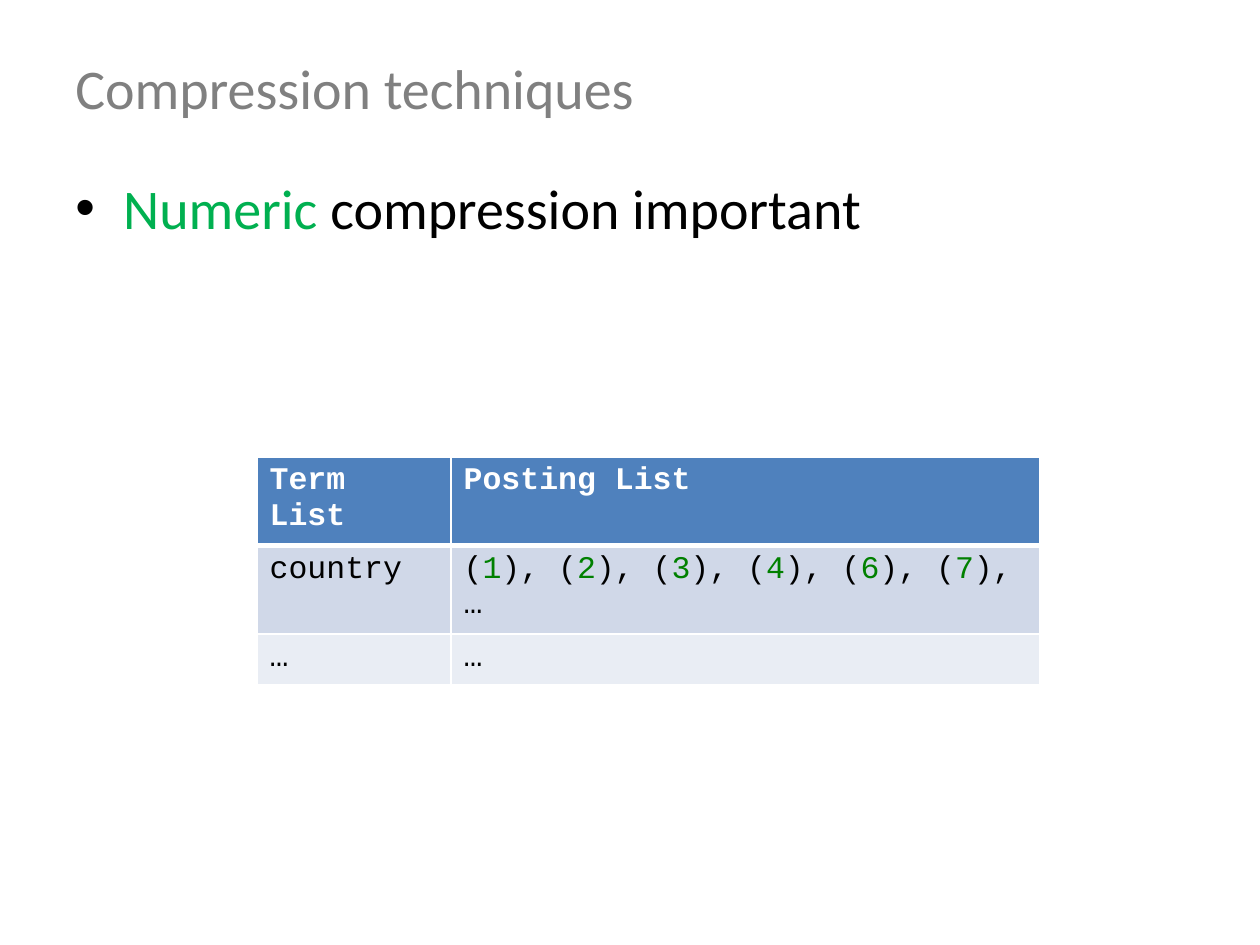
import pptx
import pptx.dml.color
import pptx.enum.text
import pptx.oxml.ns
import pptx.util
from lxml import etree
from pptx.util import Inches

BLACK, WHITE, GREY = "000000", "FFFFFF", "808080"
BRIGHT_GREEN, GREEN = "00B050", "008000"
HEADER, BAND_DARK, BAND_LIGHT = "4F81BD", "D0D8E8", "E9EDF4"


def rgb(value):
    return pptx.dml.color.RGBColor.from_string(value)


def add_element(parent, tag, **attributes):
    return etree.SubElement(parent, pptx.oxml.ns.qn(tag), attributes)


def write(para, text, font, size, color=BLACK, bold=False):
    span = para.add_run()
    span.text = text
    span.font.name = font
    span.font.size = pptx.util.Pt(size)
    span.font.bold = bold
    span.font.color.rgb = rgb(color)


class SlideBuilder:
    body_font, body_size = "Calibri", 32
    code_font, code_size = "Courier New", 18

    def __init__(self, page):
        self.page = page

    def text(self, spans, left, top, width, height, anchor="TOP", bullet=False):
        box = self.page.shapes.add_textbox(
            Inches(left), Inches(top), Inches(width), Inches(height))
        frame = box.text_frame
        frame.word_wrap = True
        frame.vertical_anchor = pptx.enum.text.MSO_ANCHOR[anchor]
        para = frame.paragraphs[0]
        if bullet:
            self.bullet(para)
        for text, color in spans:
            write(para, text, self.body_font, self.body_size, color)

    def bullet(self, para, indent=0.38):
        properties = para._p.get_or_add_pPr()
        properties.set("marL", str(Inches(indent)))
        properties.set("indent", str(-Inches(indent)))
        color = add_element(properties, "a:buClr")
        add_element(color, "a:srgbClr", val=BLACK)
        add_element(properties, "a:buFont", typeface="Arial")
        add_element(properties, "a:buChar", char="•")

    def table(self, rows, fills, left, top, widths, row_height):
        table = self.page.shapes.add_table(
            len(rows), len(widths), Inches(left), Inches(top),
            Inches(sum(widths)), Inches(row_height * len(rows))).table
        for column, width in zip(table.columns, widths):
            column.width = Inches(width)
        for row_index, (row, fill) in enumerate(zip(rows, fills)):
            for column_index, spans in enumerate(row):
                cell = table.cell(row_index, column_index)
                self.borders(cell, top=3 if row_index == 1 else 1,
                             bottom=3 if row_index == 0 else 1)
                cell.fill.solid()
                cell.fill.fore_color.rgb = rgb(fill)
                for text, color in spans:
                    write(cell.text_frame.paragraphs[0], text, self.code_font,
                          self.code_size, color, bold=row_index == 0)

    def borders(self, cell, top, bottom):
        properties = cell._tc.get_or_add_tcPr()
        for side, weight in (("L", 1), ("R", 1), ("T", top), ("B", bottom)):
            line = add_element(properties, f"a:ln{side}",
                               w=str(pptx.util.Pt(weight)))
            fill = add_element(line, "a:solidFill")
            add_element(fill, "a:srgbClr", val=WHITE)


def posting_spans(numbers):
    spans = []
    opening = "("
    for number in numbers:
        spans += [(opening, BLACK), (str(number), GREEN)]
        opening = "), ("
    return spans + [("), …", BLACK)]


def main():
    deck = pptx.Presentation()
    deck.slide_width, deck.slide_height = Inches(10), Inches(7.5)
    builder = SlideBuilder(deck.slides.add_slide(deck.slide_layouts[6]))

    # Title
    builder.text([("Compression techniques", GREY)],
                 0.5, 0.3, 9, 0.78, anchor="MIDDLE")

    # Main point
    builder.text([("Numeric", BRIGHT_GREEN), (" compression important", BLACK)],
                 0.5, 1.33, 9, 5.37, bullet=True)

    # Terms and their postings
    ellipsis = [("…", BLACK)]
    rows = [
        [[("Term List", WHITE)], [("Posting List", WHITE)]],
        [[("country", BLACK)], posting_spans([1, 2, 3, 4, 6, 7])],
        [ellipsis, ellipsis],
    ]
    builder.table(rows, [HEADER, BAND_DARK, BAND_LIGHT],
                  2.04, 3.63, [1.54, 4.67], 0.34)

    deck.save("out.pptx")


if __name__ == "__main__":
    main()
